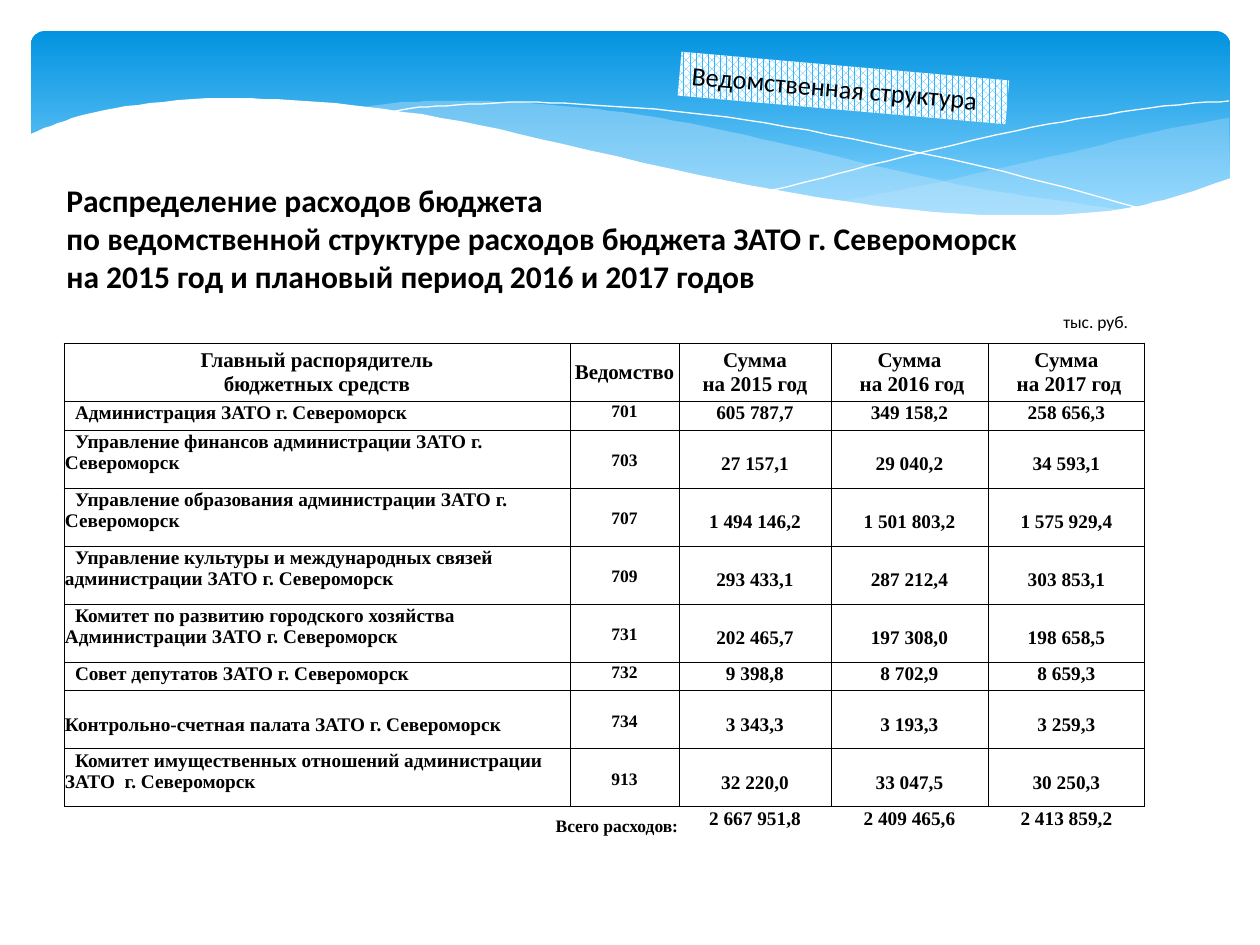
from lxml.etree import SubElement
from pptx import Presentation
from pptx.dml.color import RGBColor
from pptx.enum.dml import MSO_PATTERN
from pptx.enum.shapes import MSO_SHAPE
from pptx.enum.text import MSO_ANCHOR, PP_ALIGN
from pptx.oxml import parse_xml
from pptx.oxml.ns import nsdecls, qn
from pptx.util import Emu, Pt

PX = 914400 // 126
BLACK = RGBColor(0x00, 0x00, 0x00)
WHITE = RGBColor(0xFF, 0xFF, 0xFF)
DEEP = RGBColor(0x02, 0x93, 0xE0)
SKY = RGBColor(0x83, 0xD3, 0xFE)
PALE = RGBColor(0xC6, 0xE7, 0xFC)
TAG = RGBColor(0x31, 0xB6, 0xFD)
SANS, SERIF = "Calibri", "Times New Roman"

TITLE = ["Распределение расходов бюджета",
         "по ведомственной структуре расходов бюджета ЗАТО г. Североморск",
         "на 2015 год и плановый период 2016 и 2017 годов"]
HEAD = [["Главный распорядитель", "бюджетных средств"], ["Ведомство"],
        ["Сумма", "на 2015 год"], ["Сумма", " на 2016 год"], ["Сумма", " на 2017 год"]]
ROWS = [
    ("Администрация ЗАТО г. Североморск", "701", "605 787,7", "349 158,2", "258 656,3"),
    ("Управление финансов администрации ЗАТО г. Североморск",
     "703", "27 157,1", "29 040,2", "34 593,1"),
    ("Управление образования администрации ЗАТО г. Североморск",
     "707", "1 494 146,2", "1 501 803,2", "1 575 929,4"),
    ("Управление культуры и международных связей администрации ЗАТО г. Североморск",
     "709", "293 433,1", "287 212,4", "303 853,1"),
    ("Комитет по развитию городского хозяйства Администрации ЗАТО г. Североморск",
     "731", "202 465,7", "197 308,0", "198 658,5"),
    ("Совет депутатов ЗАТО г. Североморск", "732", "9 398,8", "8 702,9", "8 659,3"),
    ("Контрольно-счетная палата ЗАТО г. Североморск",
     "734", "3 343,3", "3 193,3", "3 259,3"),
    ("Комитет имущественных отношений администрации ЗАТО  г. Североморск",
     "913", "32 220,0", "33 047,5", "30 250,3"),
]
TOTAL = ("Всего расходов:", "2 667 951,8", "2 409 465,6", "2 413 859,2")
COLS = [506, 109, 152, 157, 157]
LOW, TALL = 29, 58
SHORT = {"701", "732"}  # departments with a one-line row
LOWERED = "734"         # department whose name sits on the second line

# Each wave is a list of curves, given by the points they pass through
RIGHT = [[(1229, 118), (1178, 127), (1123, 139), (1085, 149), (1014, 165), (949, 180),
          (890, 192), (833, 202)],
         [(833, 202), (871, 207), (922, 212), (984, 217), (1038, 217), (1087, 214),
          (1140, 205), (1187, 194), (1230, 178)]]
MID = [[(1125, 210), (1055, 200), (977, 188), (890, 169), (793, 146), (717, 129),
        (648, 116), (586, 108), (529, 103), (479, 101), (433, 101), (394, 103), (360, 108)],
       [(360, 108), (407, 113), (456, 122), (509, 134), (566, 146), (668, 170), (757, 189),
        (819, 199), (893, 209), (959, 215), (1017, 218), (1068, 217), (1125, 210)]]
FALL = [[(389, 113), (413, 108), (457, 105), (524, 102), (591, 105), (672, 111),
         (766, 123), (876, 144), (1002, 171), (1143, 209)]]
RISE = [[(772, 190), (823, 178), (907, 156), (1016, 131), (1091, 117), (1164, 106),
         (1229, 101)]]
FRONT = [[(1231, 178), (1184, 194), (1133, 207), (1071, 214), (999, 215), (915, 210),
          (816, 197), (699, 175), (563, 144), (460, 121), (368, 107), (290, 100),
          (223, 98), (150, 103), (96, 112), (58, 123), (29, 135)],
         [(29, 282), (1231, 282)]]


def box(*at):
    return [Emu(v * PX) for v in at]


def smooth(pts, steps=5):
    """Catmull-Rom curve through the points."""
    ends = [pts[0], *pts, pts[-1]]
    out = [pts[0]]
    for a, b, c, d in zip(ends, ends[1:], ends[2:], ends[3:]):
        for n in range(1, steps + 1):
            t = n / steps
            out.append(tuple(
                (2 * q + (r - p) * t + (2 * p - 5 * q + 4 * r - s) * t * t
                 + (3 * q - p - 3 * r + s) * t ** 3) / 2
                for p, q, r, s in zip(a, b, c, d)))
    return out


def wave(curves, color=None, alpha=100):
    pts = [p for curve in curves for p in smooth(curve)]
    form = shapes.build_freeform(*pts[0], scale=PX)
    form.add_line_segments(pts[1:], close=color is not None)
    shape = form.convert_to_shape()
    shape.shadow.inherit = False
    if color is None:
        shape.fill.background()
        shape.line.color.rgb = WHITE
        shape.line.width = Pt(0)
        return
    shape.fill.solid()
    shape.fill.fore_color.rgb = color
    shape.line.fill.background()
    if alpha < 100:
        clr = shape.fill._xPr.find(".//" + qn("a:srgbClr"))
        SubElement(clr, qn("a:alpha")).set("val", str(alpha * 1000))


def write(frame, lines, size, font=SANS, bold=False, align=PP_ALIGN.LEFT):
    for i, line in enumerate(lines):
        para = frame.paragraphs[0] if i == 0 else frame.add_paragraph()
        para.alignment = align
        run = para.add_run()
        run.text = line
        run.font.size, run.font.name, run.font.bold = Pt(size), font, bold
        run.font.color.rgb = BLACK


def border(cell, sides):
    props = cell._tc.get_or_add_tcPr()
    for i, side in enumerate("LRTB"):
        fill = ('<a:solidFill><a:srgbClr val="000000"/></a:solidFill>'
                if side in sides else "<a:noFill/>")
        props.insert(i, parse_xml(
            f'<a:ln{side} w="6350" {nsdecls("a")}>{fill}</a:ln{side}>'))


def put(cell, lines, size, align=PP_ALIGN.CENTER, anchor=MSO_ANCHOR.TOP, top=1, sides="LRTB"):
    cell.fill.background()
    border(cell, sides)
    cell.margin_left, cell.margin_right, cell.margin_top, cell.margin_bottom = box(1, 1, top, 0)
    cell.vertical_anchor = anchor
    write(cell.text_frame, lines, size, SERIF, True, align)


deck = Presentation()
deck.slide_width, deck.slide_height = box(1260, 945)
shapes = deck.slides.add_slide(deck.slide_layouts[6]).shapes

# Banner with waves
sky = shapes.add_shape(MSO_SHAPE.ROUNDED_RECTANGLE, *box(31, 31, 1199, 197))
sky.adjustments[0] = 0.07
sky.shadow.inherit = False
sky.line.fill.background()
sky.fill.gradient()
sky.fill.gradient_angle = 270
for stop, color, place in zip(sky.fill.gradient_stops, (DEEP, SKY), (0, 0.9)):
    stop.color.rgb, stop.position = color, place
wave(RIGHT, PALE, 29)
wave(MID, PALE, 40)
wave(FALL)
wave(RISE)
wave(FRONT, WHITE)

# Title and unit
title = shapes.add_textbox(*box(54, 175, 1191, 127)).text_frame
title.word_wrap = True
write(title, TITLE, 18, bold=True)
unit = shapes.add_textbox(*box(1051, 305, 93, 34)).text_frame
unit.word_wrap = False
write(unit, ["тыс. руб."], 10)

# Spending table
highs = [TALL, *(LOW if row[1] in SHORT else TALL for row in ROWS), LOW]
table = shapes.add_table(len(highs), len(COLS), *box(64, 343, sum(COLS), sum(highs))).table
for col, wide in zip(table.columns, COLS):
    col.width = Emu(wide * PX)
for row, high in zip(table.rows, highs):
    row.height = Emu(high * PX)
for c, lines in enumerate(HEAD):
    put(table.cell(0, c), lines, 12, anchor=MSO_ANCHOR.MIDDLE)
for r, (name, code, *sums) in enumerate(ROWS, 1):
    low = code not in SHORT
    drop = code == LOWERED
    cell = table.cell(r, 0)
    put(cell, [name], 11, PP_ALIGN.LEFT, top=23 if drop else 1)
    if not drop:
        cell.text_frame.paragraphs[0]._p.get_or_add_pPr().set("indent", str(10 * PX))
    put(table.cell(r, 1), [code], 10, top=21 if low else 1)
    for c, value in enumerate(sums, 2):
        put(table.cell(r, c), [value], 11, top=23 if low else 1)

# Total row
last = len(highs) - 1
table.cell(last, 0).merge(table.cell(last, 1))
border(table.cell(last, 1), "T")
put(table.cell(last, 0), TOTAL[:1], 10, PP_ALIGN.RIGHT, MSO_ANCHOR.BOTTOM, sides="T")
for c, value in enumerate(TOTAL[1:], 2):
    put(table.cell(last, c), [value], 11, sides="T")

# Tilted tag
tag = shapes.add_shape(MSO_SHAPE.RECTANGLE, *box(679, 66, 329, 44))
tag.rotation = 5
tag.shadow.inherit = False
tag.line.fill.background()
tag.fill.patterned()
tag.fill.pattern = MSO_PATTERN.PERCENT_70
tag.fill.fore_color.rgb, tag.fill.back_color.rgb = TAG, WHITE
tag.text_frame.word_wrap = False
write(tag.text_frame, ["Ведомственная структура"], 15)

deck.save("out.pptx")
